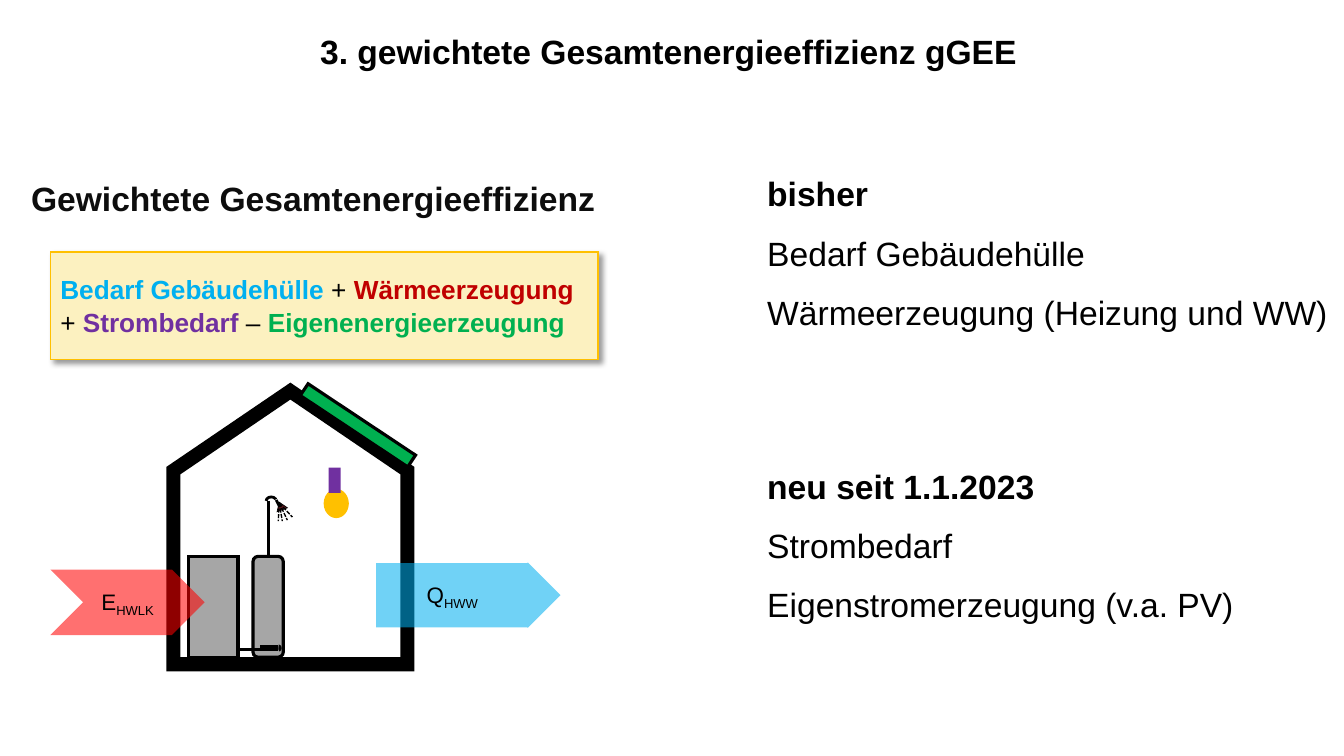
import pptx
import pptx.util
import pptx.dml.color
import pptx.enum.dml
import pptx.enum.shapes
import pptx.enum.text
import pptx.oxml
from dataclasses import dataclass

Inches = pptx.util.Inches
Pt = pptx.util.Pt
SHAPE = pptx.enum.shapes.MSO_SHAPE
ALIGN = pptx.enum.text.PP_ALIGN
ANCHOR = pptx.enum.text.MSO_ANCHOR
DASH = pptx.enum.dml.MSO_LINE.SQUARE_DOT
NS = 'xmlns:a="http://schemas.openxmlformats.org/drawingml/2006/main"'


@dataclass(frozen=True)
class Theme:
    font: str = "Arial"
    heading: float = 24
    formula: float = 18.7
    label: float = 16
    spacing: float = 1.05
    black: str = "000000"
    ink: str = "0D0D0D"
    white: str = "FFFFFF"
    cream: str = "FCF1C0"
    amber: str = "FFC000"
    blue: str = "00B0F0"
    dark_red: str = "C00000"
    red: str = "FF0000"
    purple: str = "7030A0"
    green: str = "00B050"
    grey: str = "A6A6A6"
    maroon: str = "5A161B"


def rgb(value):
    return pptx.dml.color.RGBColor.from_string(value)


def add_run(p, text, size, color, font, bold=False, baseline=None):
    r = p.add_run()
    r.text = text
    r.font.size = Pt(size)
    r.font.name = font
    r.font.bold = bold
    r.font.color.rgb = rgb(color)
    if baseline:
        r.font._element.set("baseline", str(baseline * 1000))


class SlideBuilder:
    def __init__(self, slide, theme):
        self.slide = slide
        self.theme = theme

    def fill_text(self, tf, paragraphs, size, margins=(0, 0), align=ALIGN.LEFT,
                  anchor=ANCHOR.TOP, before=0, after=0):
        tf.word_wrap = True
        tf.margin_left = tf.margin_right = Inches(margins[0])
        tf.margin_top = tf.margin_bottom = Inches(margins[1])
        tf.vertical_anchor = anchor
        for i, runs in enumerate(paragraphs):
            p = tf.add_paragraph() if i else tf.paragraphs[0]
            p.alignment = align
            p.line_spacing = self.theme.spacing
            p.space_before = Pt(before if i else 0)
            p.space_after = Pt(after)
            for text, fmt in runs:
                add_run(p, text, **{"size": size, "color": self.theme.black,
                                    "font": self.theme.font, **fmt})

    def text(self, box, paragraphs, size, **fmt):
        s = self.slide.shapes.add_textbox(*map(Inches, box))
        self.fill_text(s.text_frame, paragraphs, size, **fmt)
        return s.text_frame

    def shape(self, kind, box, fill=None, line=None, width=1, adj=(),
              rotation=0, flip="", alpha=None):
        s = self.slide.shapes.add_shape(kind, *map(Inches, box))
        s.shadow.inherit = False
        s.rotation = rotation
        for i, value in enumerate(adj):
            s.adjustments[i] = value
        for axis in flip:
            s._element.spPr.xfrm.set("flip" + axis, "1")
        if fill:
            s.fill.solid()
            s.fill.fore_color.rgb = rgb(fill)
        else:
            s.fill.background()
        if alpha:
            color = s._element.spPr.find(".//{*}solidFill/{*}srgbClr")
            color.append(pptx.oxml.parse_xml(f'<a:alpha {NS} val="{alpha * 1000}"/>'))
        if line:
            s.line.color.rgb = rgb(line)
            s.line.width = Pt(width)
            s.line._ln.append(pptx.oxml.parse_xml(f'<a:miter {NS} lim="800000"/>'))
        else:
            s.line.fill.background()
        return s

    def shadow(self, s):
        effects = s._element.spPr.find("{*}effectLst")
        effects.append(pptx.oxml.parse_xml(
            f'<a:outerShdw {NS} blurRad="{Pt(4)}" dist="{Pt(3)}" dir="2700000" '
            'algn="tl" rotWithShape="0"><a:srgbClr val="000000">'
            '<a:alpha val="40000"/></a:srgbClr></a:outerShdw>'))

    def line(self, start, end, width=2, dash=None):
        s = self.slide.shapes.add_connector(
            pptx.enum.shapes.MSO_CONNECTOR.STRAIGHT, *map(Inches, start + end))
        s.line.color.rgb = rgb(self.theme.black)
        s.line.width = Pt(width)
        if dash:
            s.line.dash_style = dash
        s._element.spPr.append(pptx.oxml.parse_xml(f"<a:effectLst {NS}/>"))

    def energy_arrow(self, kind, box, fill, symbol, index, adj=()):
        s = self.shape(kind, box, fill, alpha=56, adj=adj)
        self.fill_text(s.text_frame, [[(symbol, {}), (index, {"baseline": -25})]],
                       self.theme.label, margins=(0.1, 0.05), align=ALIGN.CENTER,
                       anchor=ANCHOR.MIDDLE)


def add_texts(b):
    t = b.theme
    bold = {"bold": True}
    tf = b.text((7.61, 1.7, 5.67, 4.41), [
        [("bisher", bold)],
        [("Bedarf Gebäudehülle", {})],
        [("Wärmeerzeugung (Heizung und WW)", {})],
        [("neu seit 1.1.2023", bold)],
        [("Strombedarf", {})],
        [("Eigenstromerzeugung (v.a. PV)", {})],
    ], t.heading, before=6, after=6)
    tf.paragraphs[3].space_before = Pt(88)
    b.text((0.21, 0.29, 12.84, 0.4),
           [[("3. gewichtete Gesamtenergieeffizienz gGEE", bold)]],
           t.heading, align=ALIGN.CENTER)
    b.text((0.21, 1.7, 5.94, 0.5),
           [[("Gewichtete Gesamtenergieeffizienz", {"bold": True, "color": t.ink})]],
           t.heading, margins=(0.1, 0.05))
    formula = b.shape(SHAPE.RECTANGLE, (0.5, 2.5, 5.43, 1.07), t.cream, t.amber)
    b.shadow(formula)
    terms = [("Bedarf Gebäudehülle", t.blue, " + "), ("Wärmeerzeugung", t.dark_red, " + "),
             ("Strombedarf", t.purple, " – "), ("Eigenenergieerzeugung", t.green, "")]
    runs = []
    for term, color, sign in terms:
        runs.append((term, {"bold": True, "color": color}))
        if sign:
            runs.append((sign, {}))
    b.fill_text(formula.text_frame, [runs], t.formula, margins=(0.1, 0.2))


def add_shower(b):
    t = b.theme
    b.shape(SHAPE.ARC, (2.65, 4.92, 0.08, 0.1), line=t.black, width=2,
            adj=(162, 42.77), rotation=90, flip="HV")
    b.line((2.74, 4.96), (2.78, 5.04))
    b.line((2.66, 4.97), (2.66, 6.39))
    b.shape(SHAPE.ISOSCELES_TRIANGLE, (2.73, 4.98, 0.11, 0.08), t.maroon, t.black,
            0.5, rotation=339.1)
    for end in ((2.76, 5.17), (2.8, 5.17), (2.85, 5.16), (2.9, 5.13)):
        b.line((2.77, 4.99), end, 1, DASH)


def add_house(b):
    t = b.theme
    b.shape(SHAPE.UP_ARROW, (1.72, 3.88, 2.32, 2.71), t.white, t.black, 10, adj=(1, 0.34))
    b.energy_arrow(SHAPE.RIGHT_ARROW, (3.73, 5.58, 1.83, 0.65), t.blue, "Q", "HWW",
                   adj=(0.98, 0.5))
    b.shape(SHAPE.RECTANGLE, (1.87, 5.52, 0.49, 1), t.grey, t.black, 2.25)
    b.energy_arrow(SHAPE.CHEVRON, (0.5, 5.65, 1.53, 0.65), t.red, "E", "HWLK")
    b.shape(SHAPE.RECTANGLE, (2.91, 4.15, 1.28, 0.14), t.green, t.black, 2.25, rotation=33.6)
    b.shape(SHAPE.OVAL, (3.21, 4.85, 0.25, 0.29), t.amber)
    b.shape(SHAPE.RECTANGLE, (3.26, 4.64, 0.12, 0.25), t.purple)
    add_shower(b)
    b.shape(SHAPE.ROUNDED_RECTANGLE, (2.51, 5.52, 0.3, 1), t.grey, t.black, 2.25)
    b.shape(SHAPE.ARC, (2.75, 6.41, 0.03, 0.04), line=t.black, width=2,
            adj=(162, 56.29), flip="V")
    b.line((2.76, 6.41), (2.58, 6.41))
    b.line((2.76, 6.44), (2.37, 6.44))


def main():
    prs = pptx.Presentation()
    prs.slide_width = Inches(13.33)
    prs.slide_height = Inches(7.5)
    b = SlideBuilder(prs.slides.add_slide(prs.slide_layouts[6]), Theme())
    add_texts(b)
    add_house(b)
    prs.save("out.pptx")


if __name__ == "__main__":
    main()
